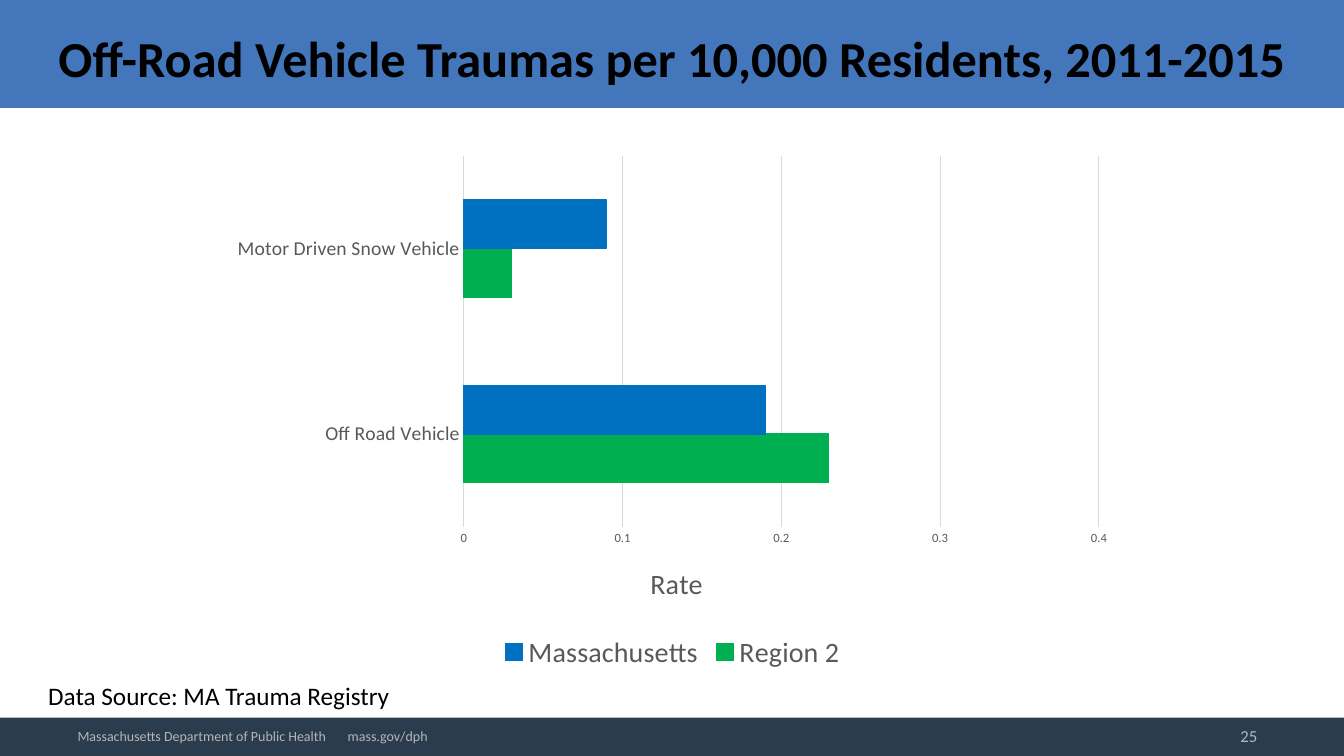
from lxml import etree
from pptx import Presentation
from pptx import util as u
from pptx.chart.data import CategoryChartData
from pptx.dml.color import RGBColor
from pptx.enum import chart as c, shapes, text
from pptx.oxml import parse_xml
from pptx.oxml.ns import nsdecls, qn

FONT = "Calibri"
WIDTH, HEIGHT = u.Inches(13.33), u.Inches(7.5)
COLOURS = {
    "header": "4376BB", "footer": "2A3C4E", "black": "000000",
    "footer text": "B5B5B5", "chart text": "595959", "grid": "D9D9D9",
    "Region 2": "00B050", "Massachusetts": "0070C0",
}
CATEGORIES = ["Off Road Vehicle", "Motor Driven Snow Vehicle"]
RATES = {"Region 2": [0.23, 0.03], "Massachusetts": [0.19, 0.09]}


def colour(name):
    return RGBColor.from_string(COLOURS[name])


def box(left, top, width, height):
    """Turn percentages of the slide's size into lengths."""
    return [int(share * side / 100) for share, side in
            zip((left, top, width, height), (WIDTH, HEIGHT) * 2)]


def style_font(font, size, name, bold=False):
    font.name, font.size, font.bold = FONT, u.Pt(size), bold
    font.color.rgb = colour(name)


def style_line(line, name):
    line.color.rgb = colour(name)
    line.width = u.Pt(0.75)


def add_band(slide, place, name):
    band = slide.shapes.add_shape(shapes.MSO_SHAPE.RECTANGLE, *place)
    band.shadow.inherit = False
    band.fill.solid()
    band.fill.fore_color.rgb = colour(name)
    band.line.fill.background()
    # Keep the band behind the title
    slide.shapes.title.element.addprevious(band.element)


def write(shape, words, size, name, bold=False, anchor=text.MSO_ANCHOR.MIDDLE,
          align=text.PP_ALIGN.LEFT):
    frame = shape.text_frame
    frame.word_wrap = True
    frame.auto_size = text.MSO_AUTO_SIZE.NONE
    frame.vertical_anchor = anchor
    paragraph = frame.paragraphs[0]
    paragraph.alignment = align
    run = paragraph.add_run()
    run.text = words
    style_font(run.font, size, name, bold)
    return paragraph


def add_text(slide, place, *words, **options):
    return write(slide.shapes.add_textbox(*place), *words, **options)


def add_tab_stop(paragraph, inches):
    properties = paragraph.runs[0].font and paragraph._p.get_or_add_pPr()
    stops = etree.SubElement(properties, qn("a:tabLst"))
    etree.SubElement(stops, qn("a:tab"), pos=str(u.Inches(inches)), algn="l")


def make_layout(inner=False, **shares):
    """Build a manual chart layout from shares of the chart's size."""
    target = '<c:layoutTarget val="inner"/>' if inner else ""
    modes = "".join(f'<c:{key}Mode val="edge"/>' for key in "xy")
    values = "".join(f'<c:{key} val="{share}"/>' for key, share in shares.items())
    return parse_xml(f'<c:layout {nsdecls("c")}><c:manualLayout>{target}{modes}'
                     f'{values}</c:manualLayout></c:layout>')


def set_layout(parent, layout, before):
    for old in parent.findall(qn("c:layout")):
        parent.remove(old)
    parent.find(qn(before)).addprevious(layout)


def style_axes(chart):
    category, value = chart.category_axis, chart.value_axis
    for axis, size in ((category, 14), (value, 9)):
        axis.major_tick_mark = axis.minor_tick_mark = c.XL_TICK_MARK.NONE
        style_font(axis.tick_labels.font, size, "chart text")
    category.has_major_gridlines = False
    style_line(category.format.line, "grid")

    value.minimum_scale, value.maximum_scale, value.major_unit = 0, 0.4, 0.1
    value.tick_labels.number_format = "General"
    value.tick_labels.number_format_is_linked = False
    value.format.line.fill.background()
    style_line(value.major_gridlines.format.line, "grid")

    value.has_title = True
    run = value.axis_title.text_frame.paragraphs[0].add_run()
    run.text = "Rate"
    style_font(run.font, 20, "chart text")
    set_layout(value.axis_title._element, make_layout(x=0.47, y=0.78), "c:overlay")


def add_rate_chart(slide, place):
    data = CategoryChartData()
    data.categories = CATEGORIES
    for name, rates in RATES.items():
        data.add_series(name, rates)
    chart = slide.shapes.add_chart(c.XL_CHART_TYPE.BAR_CLUSTERED, *place, data).chart
    chart.has_title = False
    style_font(chart.font, 10, "black")

    # Bars
    plot = chart.plots[0]
    plot.gap_width, plot.overlap, plot.vary_by_categories = 182, 0, False
    for series in plot.series:
        series.format.fill.solid()
        series.format.fill.fore_color.rgb = colour(series.name)
        style_line(series.format.line, series.name)

    # Axes, legend and plot area
    style_axes(chart)
    chart.has_legend = True
    chart.legend.position = c.XL_LEGEND_POSITION.BOTTOM
    chart.legend.include_in_layout = False
    style_font(chart.legend.font, 20, "chart text")
    area = chart._chartSpace.find(".//" + qn("c:plotArea"))
    set_layout(area, make_layout(inner=True, x=0.27, y=0.02, w=0.7, h=0.7),
               "c:barChart")


def main():
    presentation = Presentation()
    presentation.slide_width, presentation.slide_height = WIDTH, HEIGHT
    slide = presentation.slides.add_slide(presentation.slide_layouts[5])

    # Header and footer bands
    add_band(slide, box(0, 0, 100, 14.27), "header")
    add_band(slide, box(0, 94.93, 100, 5.07), "footer")

    # Title
    title = slide.shapes.title
    title.left, title.top, title.width, title.height = box(3.6, 2.4, 93.4, 10.27)
    write(title, "Off-Road Vehicle Traumas per 10,000 Residents, 2011-2015",
          36, "black", bold=True)

    # Chart and its source
    add_rate_chart(slide, box(16.28, 19.2, 67.52, 70.13))
    add_text(slide, box(2.85, 89.33, 30.23, 5.33), "Data Source: MA Trauma Registry",
             18, "black", anchor=text.MSO_ANCHOR.TOP)

    # Footer texts
    add_text(slide, box(71.87, 94.67, 22.43, 5.33), "25", 12, "footer text",
             align=text.PP_ALIGN.RIGHT)
    footer = add_text(slide, box(5.03, 94.93, 31.28, 4.93),
                      "Massachusetts Department of Public Health\tmass.gov/dph",
                      10, "footer text")
    add_tab_stop(footer, 2.68)

    presentation.save("out.pptx")


if __name__ == "__main__":
    main()
